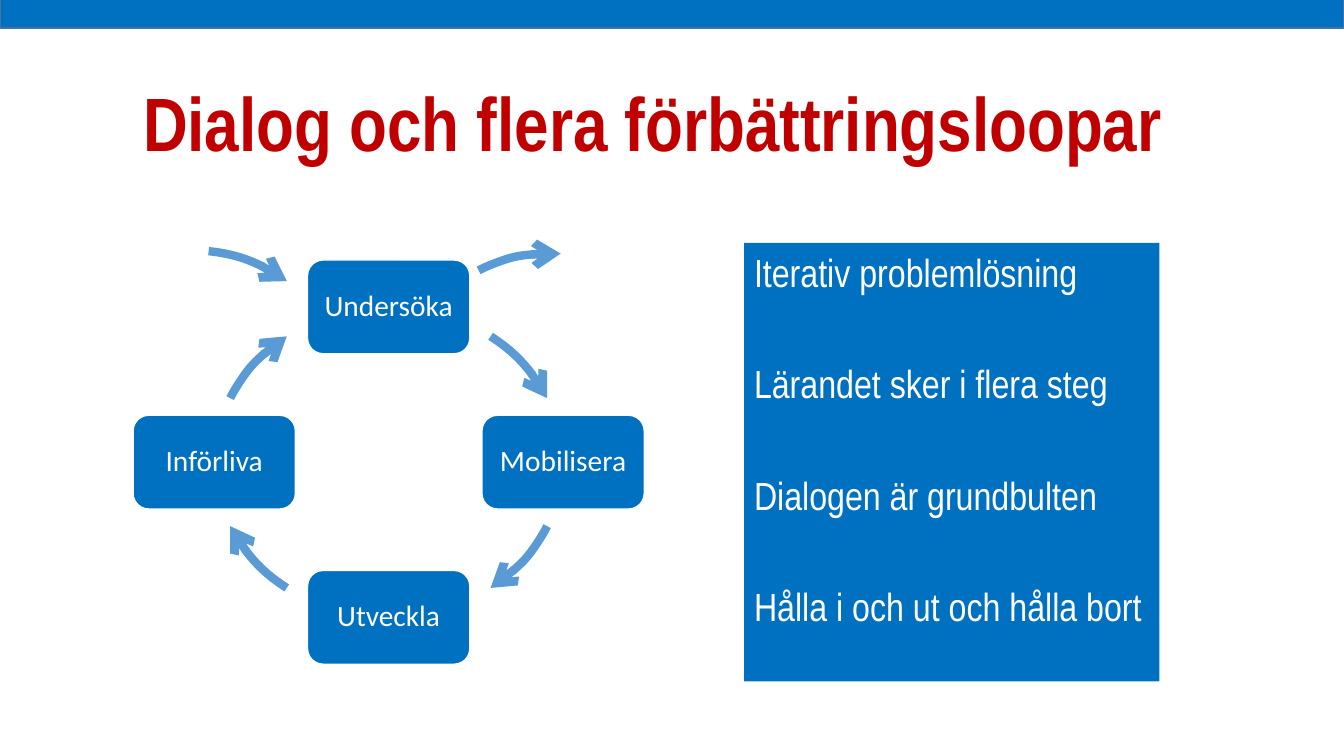
from pptx import Presentation
from pptx.util import Inches, Pt
from pptx.dml.color import RGBColor
from pptx.enum.shapes import MSO_SHAPE
from pptx.enum.text import MSO_ANCHOR, PP_ALIGN
from lxml.etree import SubElement
from pptx.oxml.ns import qn

# Content
TITLE = "Dialog och flera förbättringsloopar"
POINTS = ["Iterativ problemlösning", "Lärandet sker i flera steg",
          "Dialogen är grundbulten", "Hålla i och ut och hålla bort"]
# Steps clockwise from the top: label, direction from the centre
STEPS = [("Undersöka", 0, -1), ("Mobilisera", 1, 0),
         ("Utveckla", 0, 1), ("Införliva", -1, 0)]

BLUE, LIGHT, EDGE = "0070C0", "5B9BD5", "43739E"
RED, WHITE = "C00000", "FFFFFF"
NARROW = "Arial Narrow"

# Cycle measures in inches
MID_X, MID_Y = 3.855, 4.585
STEP_X, STEP_Y = 1.73, 1.54
BOX_W, BOX_H = 1.61, 0.93
ARC_W, ARC_H = 3.45, 3.08
# Arc angles in degrees, clockwise from the right
NEAR, FAR = 22, 51
ARCS = [(-FAR, -NEAR), (NEAR, FAR), (180 - FAR, 180 - NEAR),
        (180 + NEAR, 180 + FAR)]
# Arrows in and out: centre, turn, arc
LOOSE = [(5.645, 4.12, 36, ARCS[3]), (1.725, 4.06, 333.4, ARCS[0])]

deck = Presentation()
deck.slide_width, deck.slide_height = Inches(13.33), Inches(7.5)
slide = deck.slides.add_slide(deck.slide_layouts[6])


def color(code):
    return RGBColor.from_string(code)


def shape(kind, x, y, w, h, fill=None, line=None, width=1):
    item = slide.shapes.add_shape(kind, Inches(x), Inches(y),
                                  Inches(w), Inches(h))
    item.shadow.inherit = False
    if fill:
        item.fill.solid()
        item.fill.fore_color.rgb = color(fill)
    else:
        item.fill.background()
    if line:
        item.line.color.rgb = color(line)
        item.line.width = Pt(width)
    else:
        item.line.fill.background()
    return item


def write(item, lines, size, font=NARROW, ink=WHITE, bold=False,
          align=PP_ALIGN.LEFT, anchor=MSO_ANCHOR.TOP, inset=0.1,
          spacing=1, after=0):
    frame = item.text_frame
    frame.word_wrap = True
    frame.vertical_anchor = anchor
    frame.margin_left = frame.margin_right = Inches(inset)
    for i, line in enumerate(lines):
        para = frame.paragraphs[0] if i == 0 else frame.add_paragraph()
        para.alignment = align
        para.line_spacing = spacing
        para.space_after = Pt(after)
        run = para.add_run()
        run.text = line
        run.font.name, run.font.size = font, Pt(size)
        run.font.bold = bold
        run.font.color.rgb = color(ink)


def arrow(x, y, arc, turn=0):
    item = shape(MSO_SHAPE.ARC, x - ARC_W / 2, y - ARC_H / 2,
                 ARC_W, ARC_H, line=LIGHT, width=6)
    for i, angle in enumerate(arc):
        # Stored in 60000ths of a degree, scaled by 100000
        item.adjustments[i] = angle % 360 * 0.6
    item.rotation = turn
    SubElement(item.line._get_or_add_ln(), qn("a:tailEnd"), type="arrow")


# Title, text panel and top bar
title = slide.shapes.add_textbox(Inches(1.32), Inches(0.7),
                                 Inches(11.01), Inches(0.87))
write(title, [TITLE], 54, ink=RED, bold=True)
panel = shape(MSO_SHAPE.RECTANGLE, 7.38, 2.41, 4.12, 4.35, BLUE)
write(panel, POINTS, 28, after=46)
shape(MSO_SHAPE.RECTANGLE, 0, -0.1, 13.33, 0.38, BLUE, EDGE)

# Cycle
for arc in ARCS:
    arrow(MID_X, MID_Y, arc)
for label, dx, dy in STEPS:
    box = shape(MSO_SHAPE.ROUNDED_RECTANGLE,
                MID_X + dx * STEP_X - BOX_W / 2,
                MID_Y + dy * STEP_Y - BOX_H / 2,
                BOX_W, BOX_H, BLUE, WHITE)
    write(box, [label], 21, font="Calibri", align=PP_ALIGN.CENTER,
          anchor=MSO_ANCHOR.MIDDLE, inset=0.08, spacing=0.9)
for x, y, turn, arc in LOOSE:
    arrow(x, y, arc, turn)

deck.save("out.pptx")
